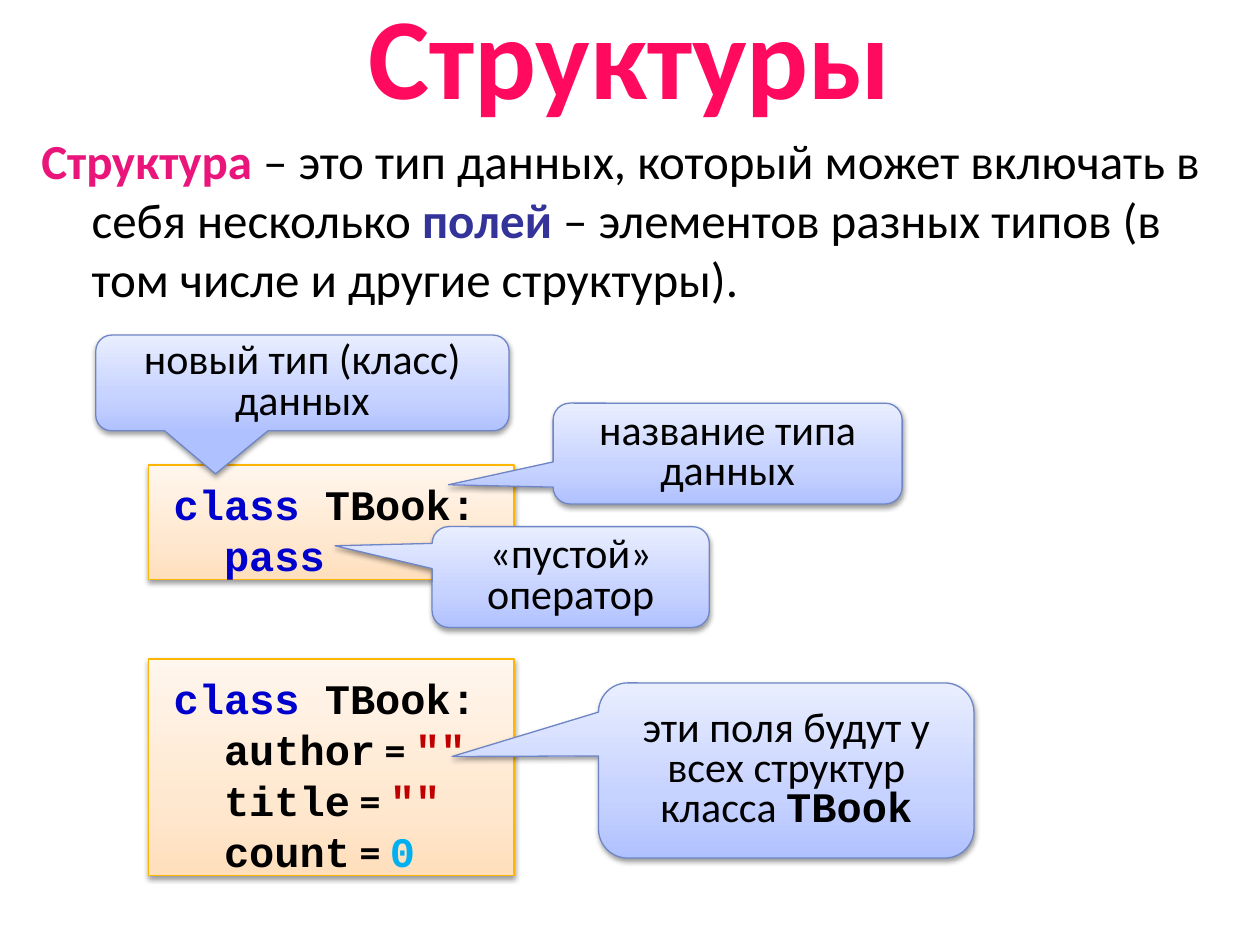
from lxml.etree import SubElement as Sub
from pptx import Presentation
from pptx.dml.color import RGBColor
from pptx.enum.shapes import MSO_SHAPE as Kind
from pptx.enum.text import MSO_ANCHOR as Anchor, PP_ALIGN as Align
from pptx.oxml import parse_xml
from pptx.oxml.ns import nsdecls, qn
from pptx.util import Inches, Pt

BLACK = RGBColor(0x00, 0x00, 0x00)
PINK = RGBColor(0xEA, 0x15, 0x7A)
NAVY = RGBColor(0x33, 0x33, 0x99)
BLUE = RGBColor(0x00, 0x00, 0xCC)
RED = RGBColor(0xC0, 0x00, 0x00)
CYAN = RGBColor(0x00, 0xB0, 0xF0)
GOLD = RGBColor(0xFE, 0xB6, 0x04)
STEEL = RGBColor(0x6E, 0x86, 0xC6)
ROSE = ((0, RGBColor(0xFF, 0x89, 0xAA)), (75, RGBColor(0xFF, 0x0A, 0x5E)),
        (100, RGBColor(0xBD, 0x00, 0x59)))
PEACH = ((0, RGBColor(0xFF, 0xDF, 0xBC)), (35, RGBColor(0xFF, 0xE8, 0xD0)),
         (100, RGBColor(0xFF, 0xF6, 0xED)))
SKY = ((0, RGBColor(0xB0, 0xC1, 0xFF)), (35, RGBColor(0xC6, 0xD2, 0xFF)),
       (100, RGBColor(0xE9, 0xEE, 0xFF)))
SANS, MONO = "Calibri", "Courier New"
HEAD = {"name": SANS, "size": Pt(66), "bold": True}
BODY = {"name": SANS, "size": Pt(28), "bold": False}
NOTE = {"name": SANS, "size": Pt(24), "bold": False}
CODE = {"name": MONO, "size": Pt(24), "bold": True}


def style(item, form):
    for key, value in form.items():
        setattr(item, key, value)


def blend(stops, angle):
    marks = "".join(f'<a:gs pos="{pos * 1000}"><a:srgbClr val="{tone}"/></a:gs>'
                    for pos, tone in stops)
    return parse_xml(f'<a:gradFill {nsdecls("a")} rotWithShape="1"><a:gsLst>{marks}'
                     f'</a:gsLst><a:lin ang="{angle * 60000}" scaled="0"/></a:gradFill>')


def write(para, text, form, tone=BLACK):
    run = para.add_run()
    run.text = text
    style(run.font, form)
    run.font.color.rgb = tone
    return run


def indent(para, left, first):
    props = para._p.get_or_add_pPr()
    props.set("marL", str(Inches(left)))
    props.set("indent", str(Inches(first)))


def label(slide, box):
    frame = slide.shapes.add_textbox(*map(Inches, box)).text_frame
    frame.word_wrap = True
    return frame


def panel(slide, kind, box, stops, edge):
    shape = slide.shapes.add_shape(kind, *map(Inches, box))
    style(shape.line, {"width": Pt(0.75)})
    shape.line.color.rgb = edge
    shape.shadow.inherit = False
    props = shape._element.spPr
    props.insert(2, blend(stops, 270))
    cast = Sub(props.find(qn("a:effectLst")), qn("a:outerShdw"), blurRad=str(Pt(3.1)),
               dist=str(Pt(1.6)), dir="5400000", rotWithShape="0")
    Sub(Sub(cast, qn("a:srgbClr"), val="000000"), qn("a:alpha"), val="38000")
    style(shape.text_frame, {"word_wrap": True, "vertical_anchor": Anchor.MIDDLE})
    return shape


def title(slide, box):
    frame = label(slide, box)
    frame.vertical_anchor = Anchor.MIDDLE
    para = frame.paragraphs[0]
    para.alignment = Align.CENTER
    props = write(para, "Структуры", HEAD).font._element
    props.replace(props.find(qn("a:solidFill")), blend(ROSE, 90))


def intro(slide, box):
    para = label(slide, box).paragraphs[0]
    indent(para, 0.4, -0.4)
    bold = BODY | {"bold": True}
    write(para, "Структура ", bold, PINK)
    write(para, "– это тип данных, который может включать в себя несколько ", BODY)
    write(para, "полей", bold, NAVY)
    write(para, " – элементов разных типов (в том числе и другие структуры).", BODY)


def code(slide, box, lines):
    frame = panel(slide, Kind.RECTANGLE, box, PEACH, GOLD).text_frame
    style(frame, {"margin_top": Inches(0.1), "margin_bottom": 0})
    for row, parts in enumerate(lines):
        para = frame.add_paragraph() if row else frame.paragraphs[0]
        style(para, {"alignment": Align.JUSTIFY, "line_spacing": Pt(29.2)})
        indent(para, 0.6 if row else 0.2, -0.1)
        for text, tone in parts:
            write(para, text, CODE, tone)


def field(name, value, tone):
    return [(name, BLACK), (" = ", BLACK), (value, tone)]


def thin(slide):
    for shape in slide.shapes:
        for para in shape.text_frame.paragraphs:
            for run in para.runs:
                if run.text == " = ":
                    run.font.name = SANS


def callout(slide, box, tip, parts):
    shape = panel(slide, Kind.ROUNDED_RECTANGULAR_CALLOUT, box, SKY, STEEL)
    for spot, value in enumerate(tip):
        shape.adjustments[spot] = value
    para = shape.text_frame.paragraphs[0]
    style(para, {"alignment": Align.CENTER, "line_spacing": 0.8})
    for text, form in parts:
        write(para, text, form)


def main():
    deck = Presentation()
    style(deck, {"slide_width": Inches(10), "slide_height": Inches(7.5)})
    slide = deck.slides.add_slide(deck.slide_layouts[6])
    top = [("class ", BLUE), ("TBook:", BLACK)]
    title(slide, (0, 0, 10, 0.85))
    intro(slide, (0.23, 0.99, 9.57, 1.51))
    code(slide, (1.18, 3.69, 2.9, 0.91), [top, [("pass", BLUE)]])
    for box, tip, text in (
        ((0.76, 2.66, 3.28, 0.76), (-0.21, 0.95), "новый тип (класс) данных"),
        ((4.39, 3.2, 2.77, 0.8), (-0.8, 0.31), "название типа данных"),
        ((3.43, 4.18, 2.2, 0.8), (-0.85, -0.31), "«пустой» оператор"),
    ):
        callout(slide, box, tip, [(text, NOTE)])
    code(slide, (1.18, 5.23, 2.9, 1.72),
         [top, field("author", '""', RED), field("title", '""', RED),
          field("count", "0", CYAN)])
    callout(slide, (4.75, 5.42, 2.98, 1.39), (-0.89, -0.08),
            [("эти поля будут у всех структур класса ", NOTE), ("TBook", CODE)])
    thin(slide)
    deck.save("out.pptx")


if __name__ == "__main__":
    main()
